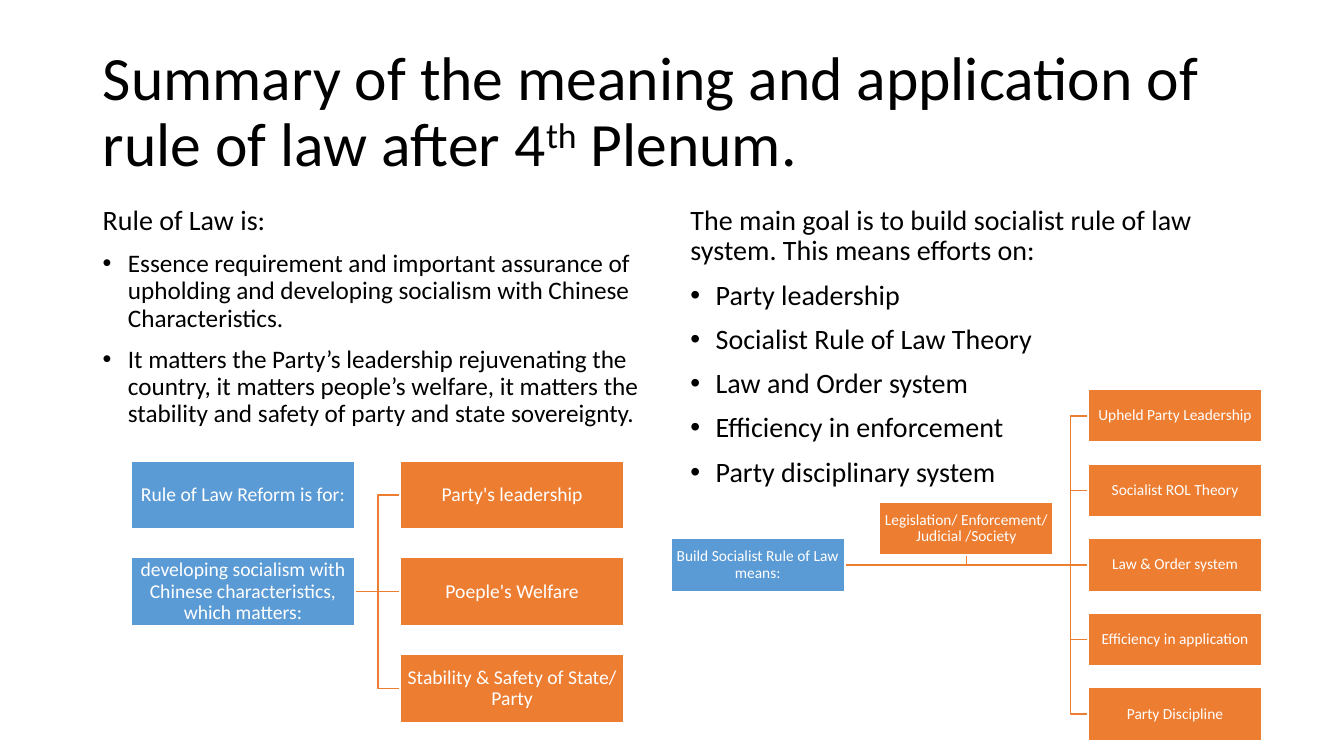
from lxml import etree
from pptx import Presentation
from pptx.dml.color import RGBColor
from pptx.enum.shapes import MSO_CONNECTOR, MSO_SHAPE
from pptx.enum.text import MSO_ANCHOR, MSO_AUTO_SIZE, PP_ALIGN
from pptx.oxml.ns import qn
from pptx.util import Inches, Pt

FONT = "Calibri"
COLORS = {"text": "000000", "white": "FFFFFF", "root": "5B9BD5", "branch": "ED7D31"}

TITLE = [
    ("Summary of the meaning and application of rule of law after 4", False),
    ("th", True),
    (" Plenum.", False),
]
COLUMNS = [
    {
        "left": 0.92,
        "bullet_size": 18,
        "intro": "Rule of Law is:",
        "bullets": [
            "Essence requirement and important assurance of upholding and developing "
            "socialism with Chinese Characteristics.",
            "It matters the Party’s leadership rejuvenating the country, it matters people’s "
            "welfare, it matters the stability and safety of party and state sovereignty.",
        ],
    },
    {
        "left": 6.75,
        "bullet_size": 20,
        "intro": "The main goal is to build socialist rule of law system. This means efforts on:",
        "bullets": [
            "Party leadership",
            "Socialist Rule of Law Theory",
            "Law and Order system",
            "Efficiency in enforcement",
            "Party disciplinary system",
        ],
    },
]
TREES = [
    {
        "root_left": 1.3, "branch_left": 3.97, "spine": 3.75, "top": 4.57,
        "pitch": 0.96, "width": 2.22, "height": 0.68, "size": 14,
        "roots": {
            0: "Rule of Law Reform is for:",
            1: "developing socialism with Chinese characteristics, which matters:",
        },
        "root_row": 1,
        "branches": ["Party's leadership", "Poeple's Welfare", "Stability & Safety of State/ Party"],
        "assistant": None,
    },
    {
        "root_left": 6.65, "branch_left": 10.79, "spine": 10.62, "top": 3.86,
        "pitch": 0.74, "width": 1.73, "height": 0.53, "size": 11,
        "roots": {2: "Build Socialist Rule of Law means:"},
        "root_row": 2,
        "branches": [
            "Upheld Party Leadership",
            "Socialist ROL Theory",
            "Law & Order system",
            "Efficiency in application",
            "Party Discipline",
        ],
        "assistant": ("Legislation/ Enforcement/ Judicial /Society", 8.72, 4.98),
    },
]


def color(name):
    return RGBColor.from_string(COLORS[name])


def add_text(paragraph, text, size, fill="text", align=PP_ALIGN.LEFT, before=0,
             bullet=False, superscript=False):
    if bullet:
        properties = paragraph._p.get_or_add_pPr()
        properties.set("marL", str(Inches(0.25)))
        properties.set("indent", str(-Inches(0.25)))
        etree.SubElement(properties, qn("a:buFont")).set("typeface", "Arial")
        etree.SubElement(properties, qn("a:buChar")).set("char", "•")
    paragraph.alignment = align
    paragraph.line_spacing = 0.9
    paragraph.space_before = Pt(before)
    run = paragraph.add_run()
    run.text = text
    run.font.name = FONT
    run.font.size = Pt(size)
    run.font.color.rgb = color(fill)
    if superscript:
        run.font._element.set("baseline", "30000")


def add_column(slide, column):
    box = slide.shapes.add_textbox(Inches(column["left"]), Inches(2), Inches(5.67), Inches(4.76))
    frame = box.text_frame
    frame.word_wrap = True
    add_text(frame.paragraphs[0], column["intro"], 20)
    for text in column["bullets"]:
        add_text(frame.add_paragraph(), text, column["bullet_size"], before=10, bullet=True)


def add_box(slide, tree, text, left, top, fill):
    shape = slide.shapes.add_shape(MSO_SHAPE.RECTANGLE, Inches(left), Inches(top),
                                   Inches(tree["width"]), Inches(tree["height"]))
    shape.shadow.inherit = False
    shape.fill.solid()
    shape.fill.fore_color.rgb = color(fill)
    shape.line.color.rgb = color("white")
    shape.line.width = Pt(1.5)
    frame = shape.text_frame
    frame.word_wrap = True
    frame.vertical_anchor = MSO_ANCHOR.MIDDLE
    frame.margin_left = frame.margin_right = Inches(0.01)
    frame.margin_top = frame.margin_bottom = Inches(0.01)
    add_text(frame.paragraphs[0], text, tree["size"], fill="white", align=PP_ALIGN.CENTER)


def add_link(slide, *points):
    points = [(Inches(x), Inches(y)) for x, y in points]
    if len(points) == 2:
        link = slide.shapes.add_connector(MSO_CONNECTOR.STRAIGHT, *points[0], *points[1])
        etree.SubElement(link._element.spPr, qn("a:effectLst"))
    else:
        builder = slide.shapes.build_freeform(*points[0])
        builder.add_line_segments(points[1:], close=False)
        link = builder.convert_to_shape()
        link.shadow.inherit = False
        link.fill.background()
    link.line.color.rgb = color("branch")
    link.line.width = Pt(1)


def add_tree(slide, tree):
    tops = [tree["top"] + row * tree["pitch"] for row in range(len(tree["branches"]))]
    half = tree["height"] / 2
    start = tree["root_left"] + tree["width"]
    root_y = tops[tree["root_row"]] + half
    spine, end = tree["spine"], tree["branch_left"]

    for row, top in enumerate(tops):
        if row == tree["root_row"]:
            add_link(slide, (start, root_y), (end, root_y))
        else:
            y = top + half
            add_link(slide, (start, root_y), (spine, root_y), (spine, y), (end, y))
    if tree["assistant"]:
        text, left, top = tree["assistant"]
        middle = left + tree["width"] / 2
        add_link(slide, (start, root_y), (middle, root_y), (middle, top + tree["height"]))
        add_box(slide, tree, text, left, top, "branch")
    for row, text in tree["roots"].items():
        add_box(slide, tree, text, tree["root_left"], tops[row], "root")
    for text, top in zip(tree["branches"], tops):
        add_box(slide, tree, text, end, top, "branch")


def main():
    presentation = Presentation()
    presentation.slide_width = Inches(13.33)
    presentation.slide_height = Inches(7.5)
    slide = presentation.slides.add_slide(presentation.slide_layouts[5])

    title = slide.shapes.title
    title.left, title.top = Inches(0.92), Inches(0.4)
    title.width, title.height = Inches(11.5), Inches(1.45)
    frame = title.text_frame
    frame.word_wrap = True
    frame.auto_size = MSO_AUTO_SIZE.NONE
    frame.vertical_anchor = MSO_ANCHOR.MIDDLE
    for text, superscript in TITLE:
        add_text(frame.paragraphs[0], text, 44, superscript=superscript)

    for column in COLUMNS:
        add_column(slide, column)
    for tree in TREES:
        add_tree(slide, tree)
    presentation.save("out.pptx")


if __name__ == "__main__":
    main()
